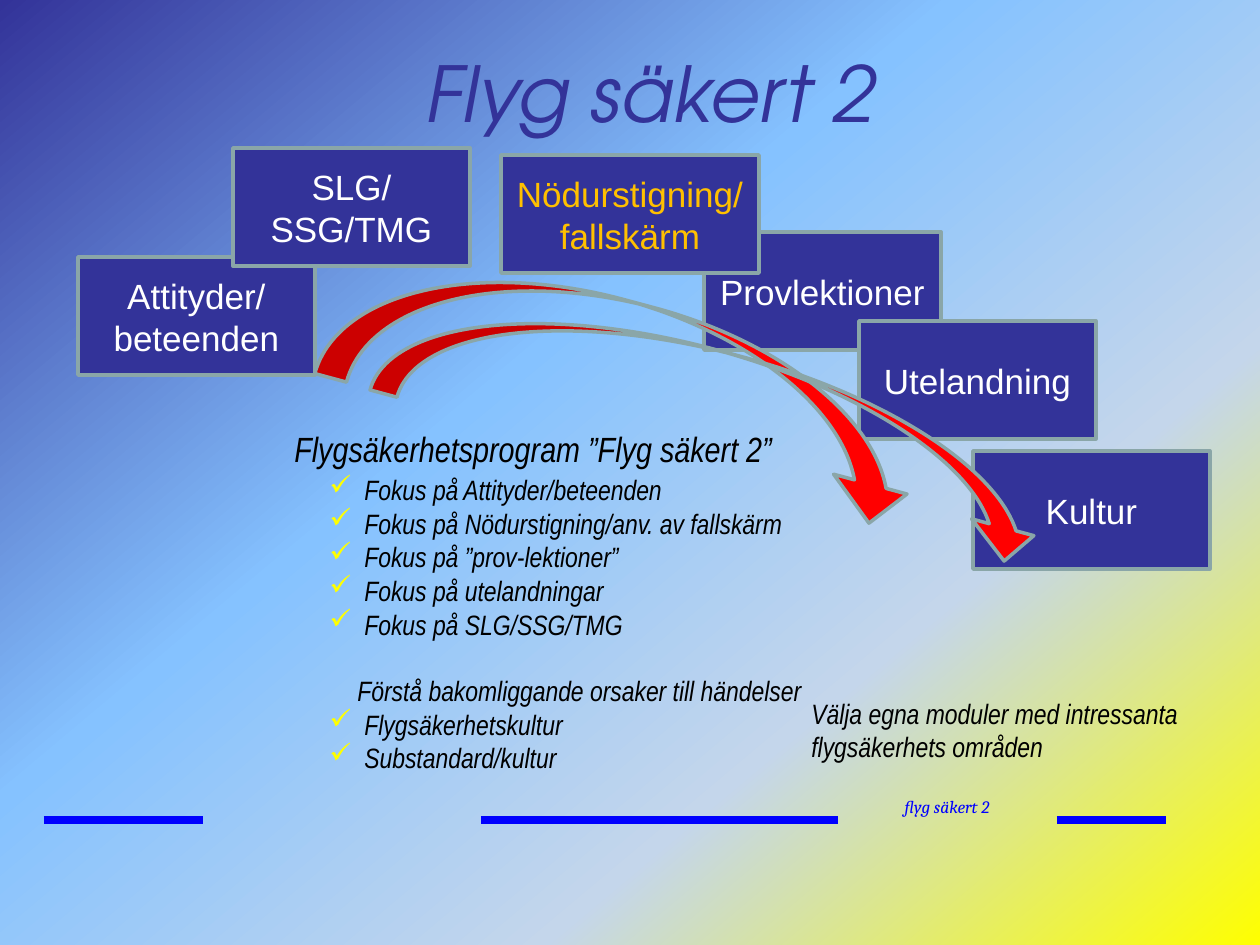
from lxml import etree
from pptx import Presentation
from pptx.dml.color import RGBColor
from pptx.enum.shapes import MSO_CONNECTOR, MSO_SHAPE
from pptx.enum.text import MSO_ANCHOR, PP_ALIGN
from pptx.oxml.ns import qn
from pptx.util import Emu, Pt

TOP, MIDDLE = MSO_ANCHOR.TOP, MSO_ANCHOR.MIDDLE
LEFT, CENTER = PP_ALIGN.LEFT, PP_ALIGN.CENTER
RECT, ARROW = MSO_SHAPE.RECTANGLE, MSO_SHAPE.CURVED_DOWN_ARROW
STRAIGHT = MSO_CONNECTOR.STRAIGHT

NAVY = RGBColor(0x33, 0x33, 0x99)
SKY = RGBColor(0x85, 0xC2, 0xFF)
MIST = RGBColor(0xC4, 0xD6, 0xEB)
YELLOW = RGBColor(0xFF, 0xFF, 0x00)
BLUE = RGBColor(0x00, 0x00, 0xFF)
GREY = RGBColor(0x8A, 0xA6, 0xA8)
RED = RGBColor(0xFF, 0x00, 0x00)
GOLD = RGBColor(0xFF, 0xC0, 0x00)
WHITE = RGBColor(0xFF, 0xFF, 0xFF)
BLACK = RGBColor(0x00, 0x00, 0x00)

STOPS = [(0, NAVY), (40, SKY), (70, MIST), (100, YELLOW)]
BOX_W, BOX_H = 237, 118
FOCUS = ["Attityder/beteenden", "Nödurstigning/anv. av fallskärm",
         "”prov-lektioner”", "utelandningar", "SLG/SSG/TMG"]
CAUSES = ["Flygsäkerhetskultur", "Substandard/kultur"]


def px(n):
    return Emu(round(n * 914400 / 126))


def style(para, name, size, color, italic=True, align=LEFT):
    para.alignment = align
    font = para.font
    font.name, font.size, font.italic = name, Pt(size), italic
    font.color.rgb = color


def paint(slide):
    """Fill the background with the diagonal gradient."""
    slide.background.fill.gradient()
    stops = next(slide.element.iter(qn("a:gsLst")))
    for old in list(stops):
        stops.remove(old)
    for pos, color in STOPS:
        stop = etree.SubElement(stops, qn("a:gs"), pos=str(pos * 1000))
        etree.SubElement(stop, qn("a:srgbClr"), val=str(color))
    lin = next(slide.element.iter(qn("a:lin")))
    lin.set("ang", str(50 * 60000))
    lin.set("scaled", "0")


def add_text(slide, x, y, w, h, wrap=False):
    frame = slide.shapes.add_textbox(px(x), px(y), px(w), px(h)).text_frame
    frame.word_wrap = wrap
    return frame


def add_title(slide, x, y, w, h):
    title = slide.shapes.title
    title.left, title.top, title.width, title.height = map(px, (x, y, w, h))
    frame = title.text_frame
    frame.text = "Flyg säkert 2"
    frame.word_wrap = False
    frame.vertical_anchor = TOP
    style(frame.paragraphs[0], "TeX Gyre Adventor", 44, NAVY)


def add_footer(slide, y):
    for start, end in [(44, 203), (481, 838), (1057, 1166)]:
        line = slide.shapes.add_connector(STRAIGHT, px(start), px(y), px(end), px(y))
        line.line.color.rgb = BLUE
        line.line.width = Pt(4.5)
        etree.SubElement(line.element.spPr, qn("a:effectLst"))
    frame = add_text(slide, 848, y - 30, 198, 84)
    frame.text = "flyg säkert 2"
    style(frame.paragraphs[0], "Cambria", 10, BLUE, align=CENTER)


def add_form(slide, kind, x, y, w, h, fill):
    form = slide.shapes.add_shape(kind, px(x), px(y), px(w), px(h))
    form.shadow.inherit = False
    form.fill.solid()
    form.fill.fore_color.rgb = fill
    form.line.color.rgb = GREY
    form.line.width = Pt(2)
    return form


def add_box(slide, text, x, y, w=BOX_W, color=WHITE):
    frame = add_form(slide, RECT, x, y, w, BOX_H, NAVY).text_frame
    frame.text = text
    frame.word_wrap = True
    frame.vertical_anchor = MIDDLE
    for para in frame.paragraphs:
        style(para, "Arial", 20, color, italic=False, align=CENTER)


def add_arrow(slide, x, y, w, h):
    arrow = add_form(slide, ARROW, x, y, w, h, RED)
    arrow.rotation = 15.1
    for i, value in enumerate((0.216, 0.5, 0.25)):
        arrow.adjustments[i] = value


def indent(para, left, first=0):
    props = para._p.get_or_add_pPr()
    props.set("marL", str(px(left)))
    props.set("indent", str(px(first)))
    return props


def add_check(frame, text):
    """Append a line with a yellow check mark."""
    para = frame.add_paragraph()
    para.text = text
    props = indent(para, 70, -35)
    color = etree.SubElement(props, qn("a:buClr"))
    etree.SubElement(color, qn("a:srgbClr"), val=str(YELLOW))
    etree.SubElement(props, qn("a:buChar"), char="✓")
    style(para, "Arial Narrow", 16, BLACK)
    return para


def add_program(slide, x, y, w, h):
    frame = add_text(slide, x, y, w, h)
    head = frame.paragraphs[0]
    head.text = "Flygsäkerhetsprogram ”Flyg säkert 2”"
    style(head, "Arial Narrow", 20, BLACK)
    checks = [add_check(frame, f"Fokus på {name}") for name in FOCUS]
    checks[0].space_before = Pt(2)
    cause = frame.add_paragraph()
    cause.text = "Förstå bakomliggande orsaker till händelser"
    indent(cause, 63)
    style(cause, "Arial Narrow", 16, BLACK)
    cause.space_before = Pt(19)
    for name in CAUSES:
        add_check(frame, name)


def add_note(slide, x, y, w, h):
    frame = add_text(slide, x, y, w, h, wrap=True)
    frame.text = "Välja egna moduler med intressanta flygsäkerhets områden"
    style(frame.paragraphs[0], "Arial Narrow", 16, BLACK)


def main():
    deck = Presentation()
    deck.slide_width, deck.slide_height = px(1260), px(945)
    slide = deck.slides.add_slide(deck.slide_layouts[5])
    paint(slide)
    add_footer(slide, 820)
    add_title(slide, 413, 39, 507, 106)
    add_box(slide, "Attityder/\nbeteenden", 78, 257)
    add_box(slide, "Provlektioner", 704, 232)
    add_box(slide, "Utelandning", 859, 321)
    add_box(slide, "Kultur", 973, 451)
    add_arrow(slide, 324, 304, 612, 152)
    add_program(slide, 282, 421, 539, 364)
    add_arrow(slide, 375, 353, 689, 129)
    add_box(slide, "Nödurstigning/\nfallskärm", 501, 155, 258, GOLD)
    add_note(slide, 799, 690, 417, 81)
    add_box(slide, "SLG/\nSSG/TMG", 233, 148)
    deck.save("out.pptx")


if __name__ == "__main__":
    main()
